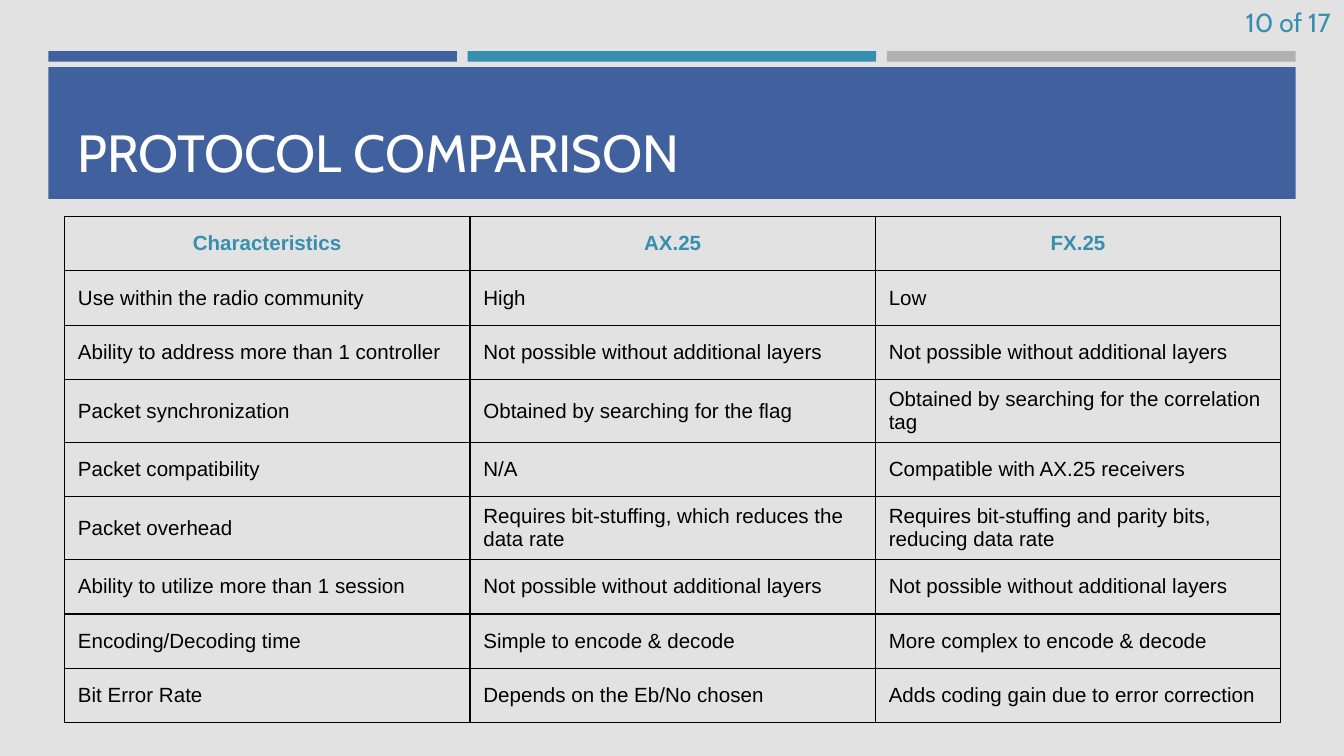
from lxml import etree
from pptx import Presentation
from pptx.dml.color import RGBColor
from pptx.enum.shapes import MSO_SHAPE
from pptx.enum.text import MSO_ANCHOR, PP_ALIGN
from pptx.oxml.ns import qn
from pptx.util import Inches, Pt

RECT = MSO_SHAPE.RECTANGLE
TOP, MIDDLE, BOTTOM = MSO_ANCHOR.TOP, MSO_ANCHOR.MIDDLE, MSO_ANCHOR.BOTTOM
LEFT, CENTER, RIGHT = PP_ALIGN.LEFT, PP_ALIGN.CENTER, PP_ALIGN.RIGHT

TITLE = "PROTOCOL COMPARISON"
PAGE = "10 of 17"
ROWS = [
    ("Characteristics", "AX.25", "FX.25"),
    ("Use within the radio community", "High", "Low"),
    ("Ability to address more than 1 controller",
     "Not possible without additional layers",
     "Not possible without additional layers"),
    ("Packet synchronization", "Obtained by searching for the flag",
     "Obtained by searching for the correlation tag"),
    ("Packet compatibility", "N/A", "Compatible with AX.25 receivers"),
    ("Packet overhead", "Requires bit-stuffing, which reduces the data rate",
     "Requires bit-stuffing and parity bits, reducing data rate"),
    ("Ability to utilize more than 1 session",
     "Not possible without additional layers",
     "Not possible without additional layers"),
    ("Encoding/Decoding time", "Simple to encode & decode",
     "More complex to encode & decode"),
    ("Bit Error Rate", "Depends on the Eb/No chosen",
     "Adds coding gain due to error correction"),
]

THEME = {
    "back": "E2E2E2", "blue": "40619D", "teal": "388EAF", "gray": "B1B1B1",
    "white": "FFFFFF", "black": "000000",
    "head": "Cabin", "body": "Arial",
    "title": 28, "page": 14, "cell": 11, "rule": 0.75,
}
WIDE = 10
HIGH = WIDE * 9 / 16
BARS = ["blue", "teal", "gray"]
BAR_Y, BAR_W, BAR_H = 0.38, 3.04, 0.08
BAND_X, BAND_Y, BAND_W, BAND_H = 0.36, 0.5, 9.28, 0.98
BAR_STEP = (BAND_W - BAR_W) / (len(BARS) - 1)
TITLE_BOX = (0.48, 0.58, 9.05, 0.83)
PAGE_BOX = (8.06, 0, 1.94, 0.34)
GRID_X, GRID_Y, GRID_W, ROW_H, PAD = 0.48, 1.61, 9.05, 0.405, 0.05


def color(name):
    return RGBColor.from_string(THEME[name])


def add_bar(slide, box, fill):
    bar = slide.shapes.add_shape(RECT, *map(Inches, box))
    bar.shadow.inherit = False
    bar.fill.solid()
    bar.fill.fore_color.rgb = color(fill)
    bar.line.fill.background()


def write(frame, text, size, face, ink, align=LEFT, bold=False):
    frame.text = text
    para = frame.paragraphs[0]
    para.alignment = align
    font = para.runs[0].font
    font.size, font.name, font.bold = Pt(THEME[size]), THEME[face], bold
    font.color.rgb = color(ink)


def add_text(slide, box, text, size, ink, align=LEFT, anchor=TOP):
    frame = slide.shapes.add_textbox(*map(Inches, box)).text_frame
    frame.word_wrap = True
    frame.vertical_anchor = anchor
    write(frame, text, size, "head", ink, align)


def add_rules(cell):
    """Draw all four cell borders."""
    props = cell._tc.get_or_add_tcPr()
    for spot, side in enumerate(("lnL", "lnR", "lnT", "lnB")):
        line = etree.Element(qn(f"a:{side}"), w=str(Pt(THEME["rule"])))
        fill = etree.SubElement(line, qn("a:solidFill"))
        etree.SubElement(fill, qn("a:srgbClr"), val=THEME["black"])
        props.insert(spot, line)


def add_grid(slide):
    count = len(ROWS[0])
    grid = slide.shapes.add_table(
        len(ROWS), count, Inches(GRID_X), Inches(GRID_Y),
        Inches(GRID_W), Inches(ROW_H * len(ROWS))).table
    grid.horz_banding = False
    for col in grid.columns:
        col.width = Inches(GRID_W / count)
    for r, row in enumerate(ROWS):
        grid.rows[r].height = Inches(ROW_H)
        top = r == 0
        for c, text in enumerate(row):
            cell = grid.cell(r, c)
            cell.fill.background()
            cell.vertical_anchor = MIDDLE
            cell.margin_top = cell.margin_bottom = Inches(PAD)
            write(cell.text_frame, text, "cell", "body",
                  "teal" if top else "black", CENTER if top else LEFT, top)
            add_rules(cell)


def main():
    deck = Presentation()
    deck.slide_width, deck.slide_height = Inches(WIDE), Inches(HIGH)
    slide = deck.slides.add_slide(deck.slide_layouts[6])
    slide.background.fill.solid()
    slide.background.fill.fore_color.rgb = color("back")

    for i, fill in enumerate(BARS):
        add_bar(slide, (BAND_X + i * BAR_STEP, BAR_Y, BAR_W, BAR_H), fill)
    add_bar(slide, (BAND_X, BAND_Y, BAND_W, BAND_H), "blue")
    add_text(slide, TITLE_BOX, TITLE, "title", "white", anchor=BOTTOM)
    add_text(slide, PAGE_BOX, PAGE, "page", "teal", align=RIGHT)
    add_grid(slide)
    deck.save("out.pptx")


if __name__ == "__main__":
    main()
